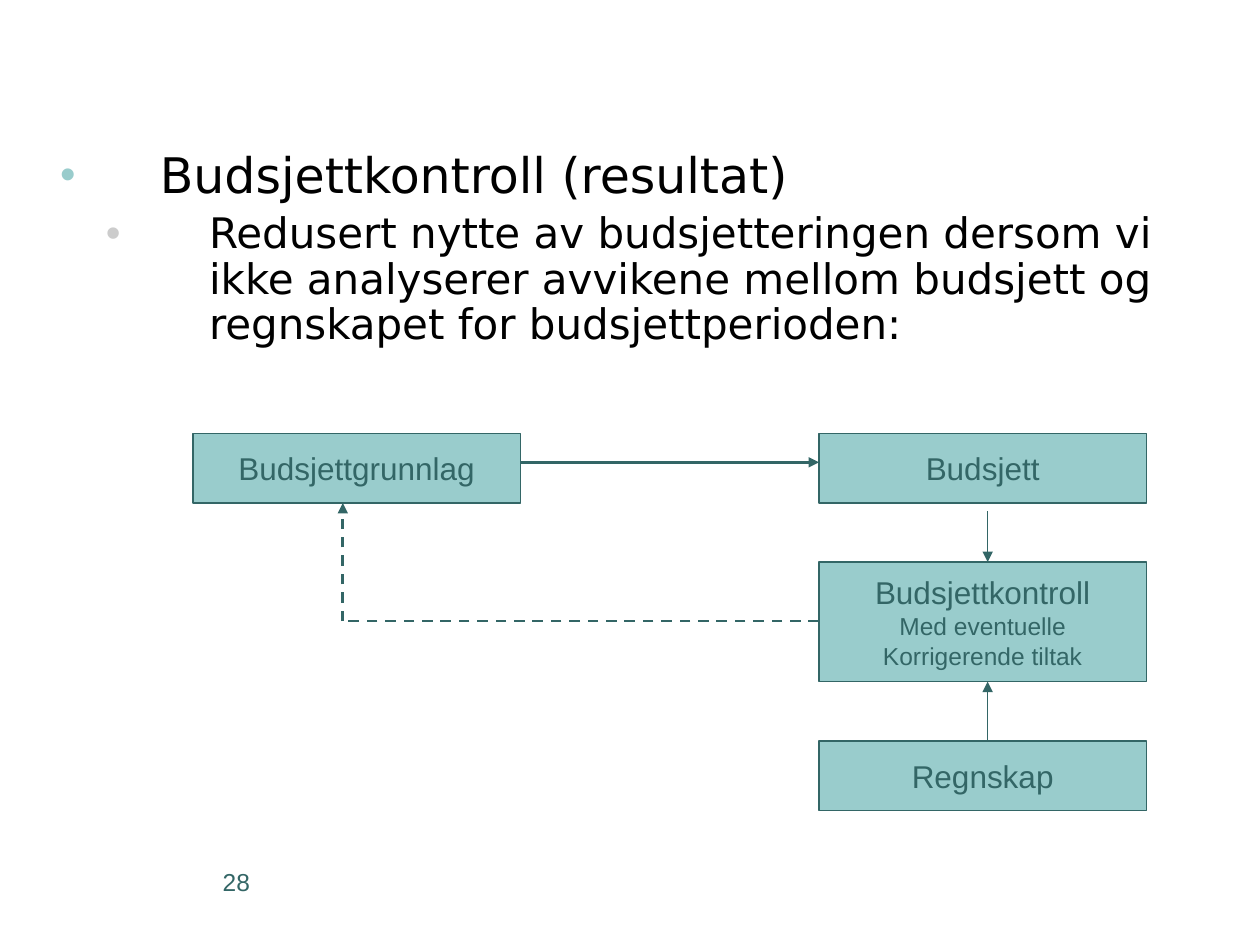
from dataclasses import dataclass

import pptx
import pptx.dml.color
import pptx.enum.dml
import pptx.enum.shapes
import pptx.enum.text
import pptx.oxml
import pptx.oxml.ns
import pptx.util
from lxml import etree

Cm = pptx.util.Cm
Pt = pptx.util.Pt
RGB = pptx.dml.color.RGBColor
Align = pptx.enum.text.PP_ALIGN
qn = pptx.oxml.ns.qn

TEAL = RGB(0x33, 0x66, 0x66)
AQUA = RGB(0x99, 0xCC, 0xCC)
GREY = RGB(0xCC, 0xCC, 0xCC)
BLACK = RGB(0, 0, 0)

LEFT, RIGHT, WIDE = 3.89, 16.51, 6.6  # box columns and box width, in cm
LOW, HIGH = 1.4, 2.41  # box heights
TOP, MID, END = 8.74, 11.33, 14.94  # box rows
BACK, DOWN = 6.91, 19.91  # x of the feedback line and the right-hand arrows
FLOW, LOOP = 9.32, 12.52  # y of the main arrow and the feedback line


@dataclass
class Item:
    text: str
    level: int
    size: int
    left: float
    hang: float
    color: RGB
    scale: int
    before: float


@dataclass
class Box:
    left: float
    top: float
    high: float
    head: str
    notes: tuple[str, ...] = ()


@dataclass
class Line:
    x1: float
    y1: float
    x2: float
    y2: float
    width: float
    dash: bool = False
    arrow: bool = True


ITEMS = [
    Item("Budsjettkontroll (resultat)", 0, 28, 2.97, 2.01, AQUA, 90, 0),
    Item("Redusert nytte av budsjetteringen dersom vi ikke analyserer avvikene "
         "mellom budsjett og regnskapet for budsjettperioden:",
         1, 24, 3.96, 2.08, GREY, 100, 4.8),
]
BOXES = [
    Box(LEFT, TOP, LOW, "Budsjettgrunnlag"),
    Box(RIGHT, TOP, LOW, "Budsjett"),
    Box(RIGHT, MID, HIGH, "Budsjettkontroll", ("Med eventuelle", "Korrigerende tiltak")),
    Box(RIGHT, END, LOW, "Regnskap"),
]
LINES = [
    Line(LEFT + WIDE, FLOW, RIGHT, FLOW, 1.5),
    Line(RIGHT, LOOP, BACK, LOOP, 1.5, dash=True, arrow=False),
    Line(BACK, LOOP, BACK, TOP + LOW, 1.5, dash=True),
    Line(DOWN, 10.31, DOWN, MID, 0.75),
    Line(DOWN, END, DOWN, MID + HIGH, 0.75),
]


def style(para, size: float, color: RGB, face: str = "Arial") -> None:
    para.font.size = Pt(size)
    para.font.name = face
    para.font.color.rgb = color


def add_bullet(para, item: Item) -> None:
    props = para._p.get_or_add_pPr()
    props.set("marL", str(Cm(item.left)))
    props.set("indent", str(-Cm(item.hang)))
    tint = etree.SubElement(props, qn("a:buClr"))
    etree.SubElement(tint, qn("a:srgbClr"), val=str(item.color))
    etree.SubElement(props, qn("a:buSzPct"), val=str(item.scale * 1000))
    etree.SubElement(props, qn("a:buFont"), typeface="Arial")
    etree.SubElement(props, qn("a:buChar"), char="•")


def fill_body(body, items: list[Item]) -> None:
    body.left, body.top, body.width, body.height = Cm(0), Cm(2.92), Cm(24.31), Cm(4.6)
    frame = body.text_frame
    frame.auto_size = pptx.enum.text.MSO_AUTO_SIZE.NONE
    for i, item in enumerate(items):
        para = frame.add_paragraph() if i else frame.paragraphs[0]
        para.text = item.text
        para.level = item.level
        para.line_spacing = 0.9
        para.space_before = Pt(item.before)
        add_bullet(para, item)
        style(para, item.size, BLACK, "DejaVu Sans")


def draw_box(slide, box: Box) -> None:
    shape = slide.shapes.add_shape(
        pptx.enum.shapes.MSO_SHAPE.RECTANGLE,
        Cm(box.left), Cm(box.top), Cm(WIDE), Cm(box.high))
    shape.shadow.inherit = False
    shape.fill.solid()
    shape.fill.fore_color.rgb = AQUA
    shape.line.color.rgb = TEAL
    shape.line.width = Pt(0.75)
    frame = shape.text_frame
    frame.word_wrap = False
    frame.vertical_anchor = pptx.enum.text.MSO_ANCHOR.MIDDLE
    frame.text = "\n".join((box.head, *box.notes))
    for i, para in enumerate(frame.paragraphs):
        para.alignment = Align.CENTER
        style(para, 14 if i else 18, TEAL)


def draw_line(slide, line: Line) -> None:
    link = slide.shapes.add_connector(
        pptx.enum.shapes.MSO_CONNECTOR.STRAIGHT,
        Cm(line.x1), Cm(line.y1), Cm(line.x2), Cm(line.y2))
    link.line.color.rgb = TEAL
    link.line.width = Pt(line.width)
    if line.dash:
        link.line.dash_style = pptx.enum.dml.MSO_LINE.DASH
    if line.arrow:
        etree.SubElement(link.line._get_or_add_ln(), qn("a:tailEnd"), type="triangle")
    etree.SubElement(link._element.spPr, qn("a:effectLst"))


def add_number(slide, text: str) -> None:
    area = slide.shapes.add_textbox(Cm(4.24), Cm(17.35), Cm(3.61), Cm(1.27))
    frame = area.text_frame
    frame.word_wrap = True
    frame.text = text
    style(frame.paragraphs[0], 14, TEAL)


def main() -> None:
    deck = pptx.Presentation()
    deck.slide_width, deck.slide_height = Cm(25.4), Cm(19.05)
    slide = deck.slides.add_slide(deck.slide_layouts[1])
    title = slide.shapes.title._element
    title.getparent().remove(title)
    add_number(slide, "28")
    fill_body(slide.placeholders[1], ITEMS)
    for box in BOXES:
        draw_box(slide, box)
    for line in LINES:
        draw_line(slide, line)
    deck.save("out.pptx")


if __name__ == "__main__":
    main()
